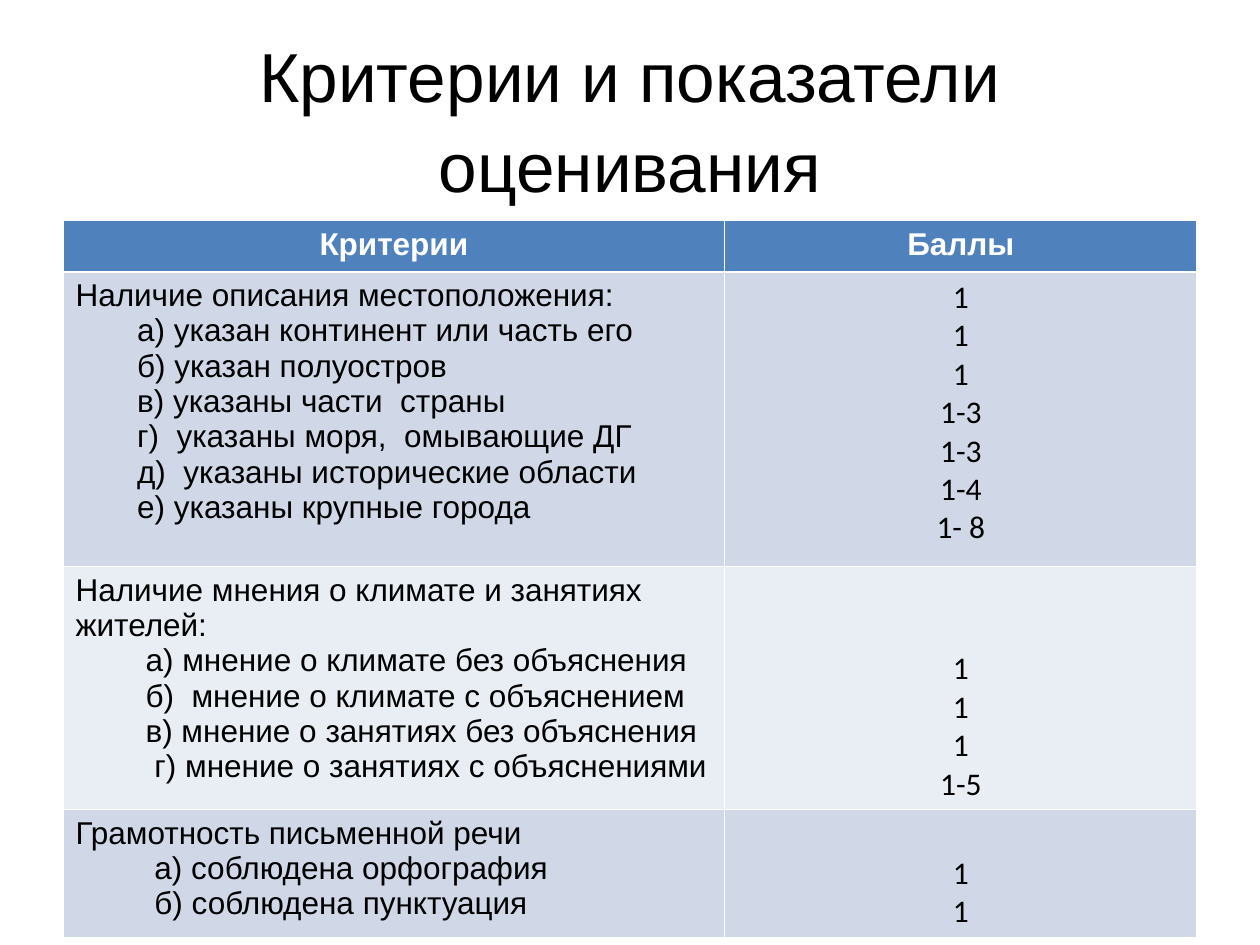
from pptx import Presentation
from pptx.dml.color import RGBColor
from pptx.enum.text import MSO_ANCHOR, PP_ALIGN
from pptx.util import Cm, Pt

LEFT, MID = PP_ALIGN.LEFT, PP_ALIGN.CENTER
BLACK, WHITE = "000000", "FFFFFF"
BLUE, DARK, PALE = "4F81BD", "D0D8E8", "E9EDF4"


def color(code):
    return RGBColor.from_string(code)


def write(frame, lines, align, **form):
    """Fill a frame with (text, indent in cm) lines in one format."""
    for num, (text, indent) in enumerate(lines):
        para = frame.add_paragraph() if num else frame.paragraphs[0]
        para.alignment = align
        if indent:
            para._p.get_or_add_pPr().set("marL", str(Cm(indent)))
        run = para.add_run()
        run.text = text
        run.font.color.rgb = color(form["ink"])
        for key in ("name", "size", "bold"):
            setattr(run.font, key, form[key])


prs = Presentation()
prs.slide_width, prs.slide_height = Cm(25.4), Cm(19.05)
slide = prs.slides.add_slide(prs.slide_layouts[6])

# Title
title = slide.shapes.add_textbox(Cm(1.27), Cm(0.76), Cm(22.86), Cm(3.18))
frame = title.text_frame
frame.word_wrap = True
frame.vertical_anchor = MSO_ANCHOR.MIDDLE
write(frame, [("Критерии и показатели оценивания", 0)], MID,
      name="Arial", size=Pt(39.6), bold=False, ink=BLACK)
frame.paragraphs[0].line_spacing = 1.08

# Sections: fill, height, heading, points (text, indent), scores, lines above scores
parts = [
    (DARK, 5.94, "Наличие описания местоположения:", [
        ("а) указан континент или часть его", 1.24),
        ("б) указан полуостров", 1.24),
        ("в) указаны части  страны", 1.24),
        ("г)  указаны моря,  омывающие ДГ", 1.24),
        ("д)  указаны исторические области", 1.24),
        ("е) указаны крупные города", 1.24),
    ], ["1", "1", "1", "1-3", "1-3", "1-4", "1- 8"], 0),
    (PALE, 4.9, "Наличие мнения о климате и занятиях жителей:", [
        ("а) мнение о климате без объяснения", 1.41),
        ("б)  мнение о климате с объяснением", 1.41),
        ("в) мнение о занятиях без объяснения", 1.41),
        ("г) мнение о занятиях с объяснениями", 1.59),
    ], ["1", "1", "1", "1-5"], 2),
    (DARK, 2.58, "Грамотность письменной речи", [
        ("а) соблюдена орфография", 1.59),
        ("б) соблюдена пунктуация", 1.59),
    ], ["1", "1"], 1),
]

# Table
high = 1.03
total = high + sum(part[1] for part in parts)
table = slide.shapes.add_table(len(parts) + 1, 2, Cm(1.27), Cm(4.45),
                               Cm(22.86), Cm(total)).table
for col, wide in zip(table.columns, (13.34, 9.52)):
    col.width = Cm(wide)

# Header row
table.rows[0].height = Cm(high)
for cell, text in zip(table.rows[0].cells, ("Критерии", "Баллы")):
    cell.fill.solid()
    cell.fill.fore_color.rgb = color(BLUE)
    write(cell.text_frame, [(text, 0)], MID,
          name="Arial", size=Pt(18), bold=True, ink=WHITE)

# Body rows
body = {"size": Pt(18), "bold": False, "ink": BLACK}
for num, (fill, tall, head, points, scores, skip) in enumerate(parts, 1):
    row = table.rows[num]
    row.height = Cm(tall)
    for cell in row.cells:
        cell.fill.solid()
        cell.fill.fore_color.rgb = color(fill)
    left, right = row.cells
    write(left.text_frame, [(head, 0)] + points, LEFT, name="Arial", **body)
    right.margin_top = Cm(0.13 + 0.775 * skip)
    write(right.text_frame, [(score, 0) for score in scores], MID,
          name="Calibri", **body)

prs.save("out.pptx")
